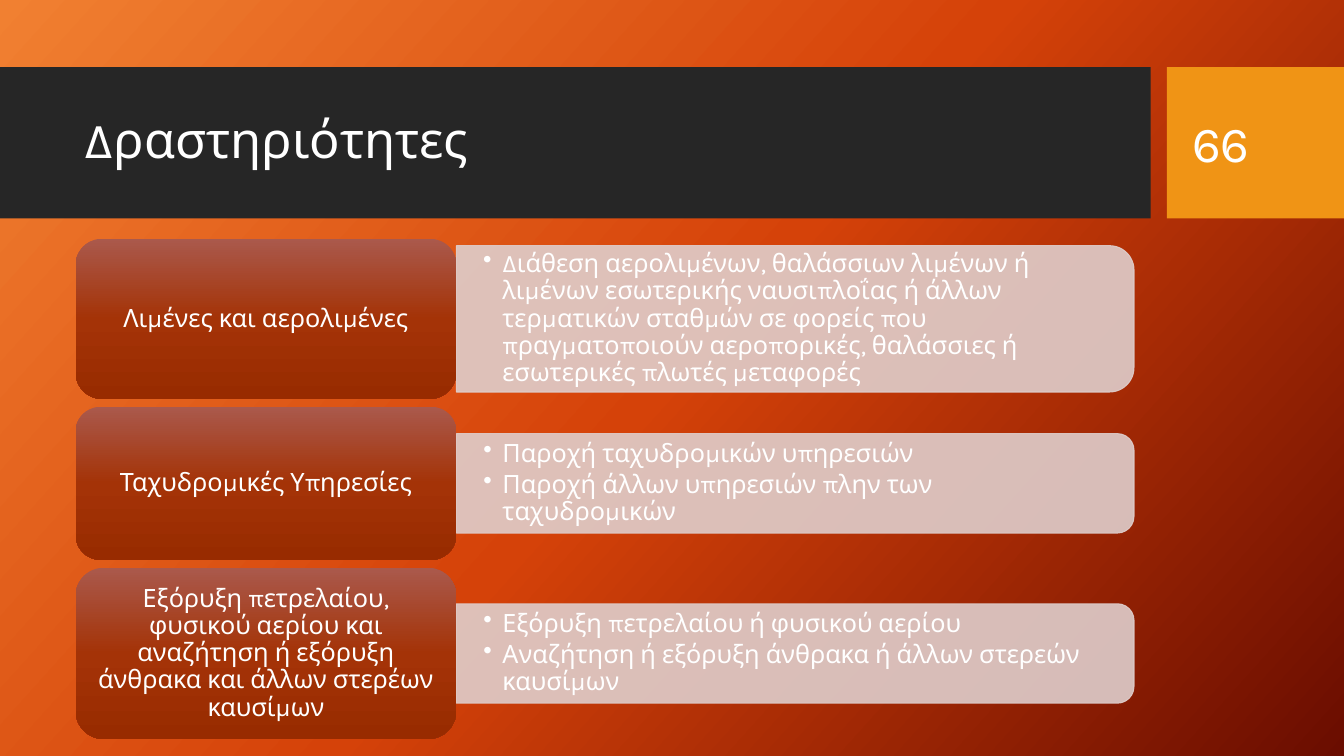
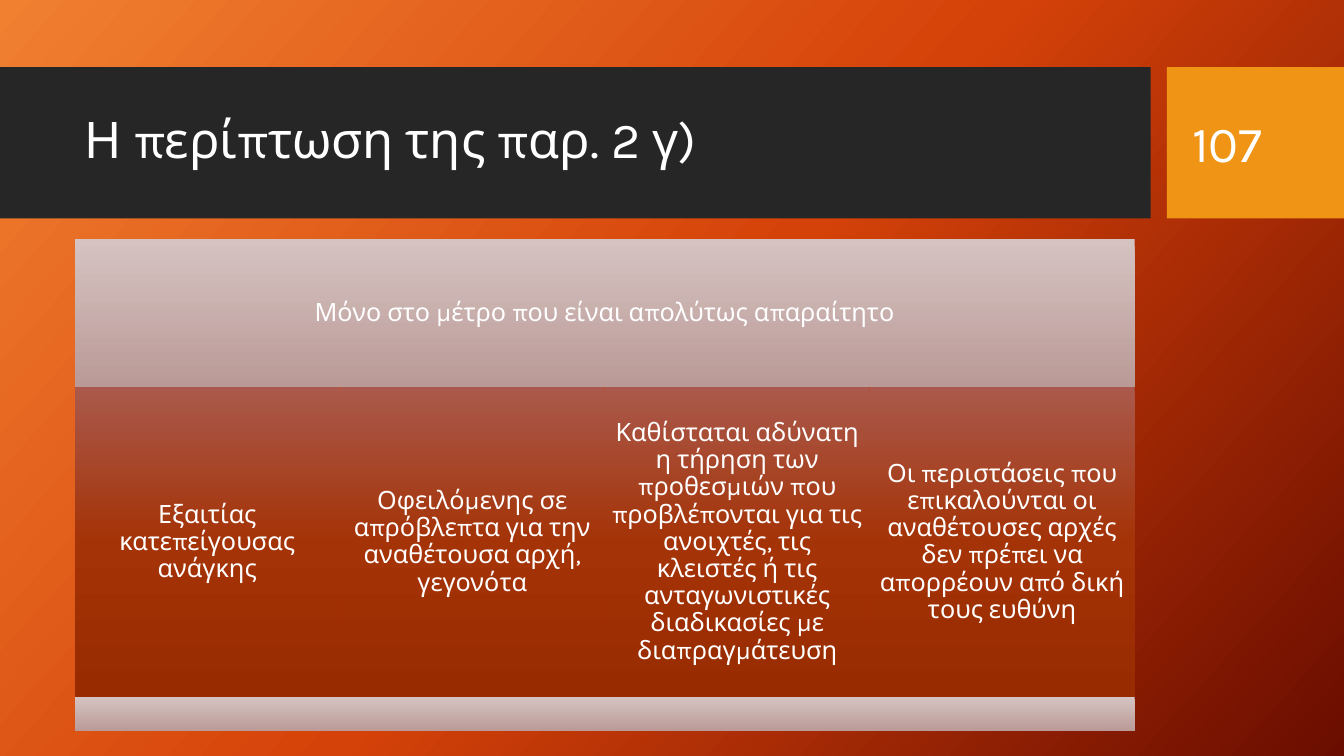
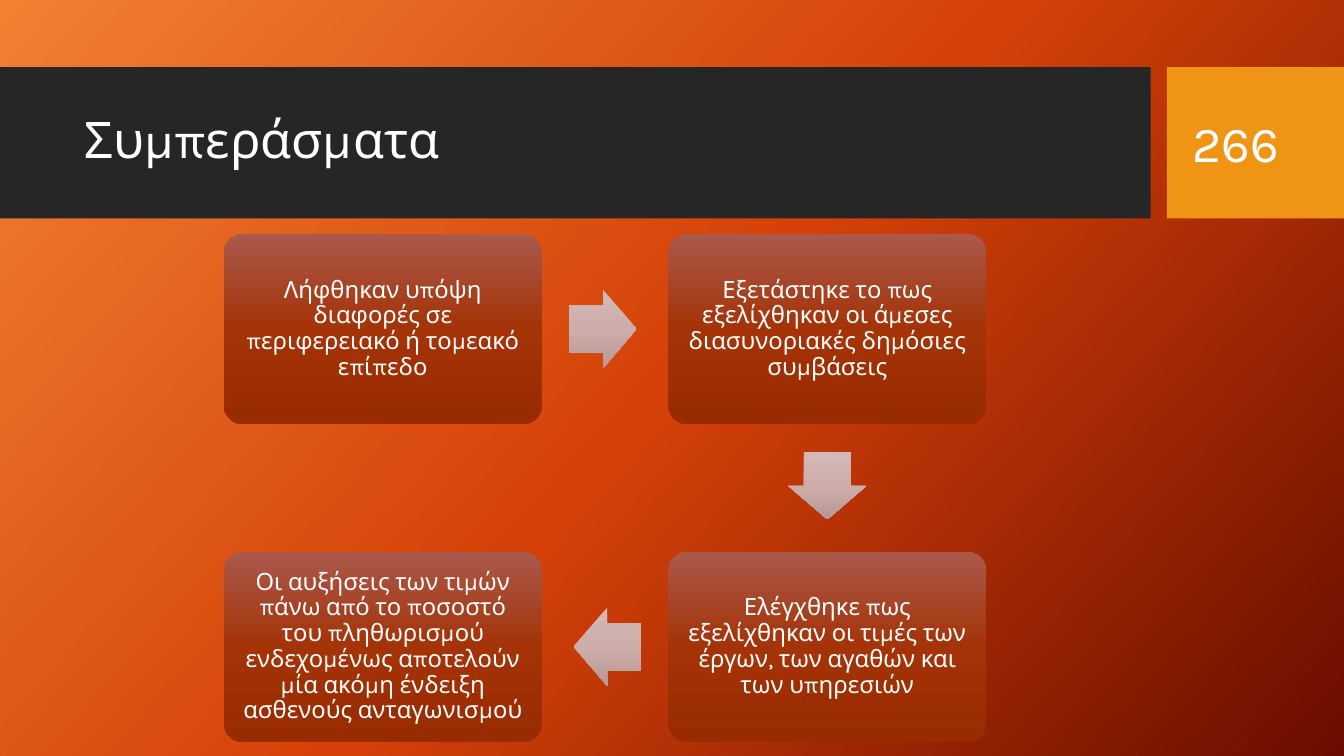
from dataclasses import dataclass
from typing import Any, NamedTuple

from lxml.etree import SubElement
from pptx import Presentation
from pptx.dml.color import RGBColor
from pptx.dml.fill import FillFormat
from pptx.enum.shapes import MSO_SHAPE
from pptx.enum.text import MSO_ANCHOR, PP_ALIGN
from pptx.oxml.ns import qn
from pptx.shapes.autoshape import Shape
from pptx.slide import Slide
from pptx.util import Pt

Stops = tuple[tuple[int, str], ...]


@dataclass(frozen=True)
class Theme:
    font: str = "Karla"
    white: str = "FFFFFF"
    band: str = "262626"
    accent: str = "F09415"
    panel: str = "DFCECC"
    panel_opacity: int = 90
    background: Stops = ((0, "F18031"), (50, "D54209"), (100, "6A0D00"))
    card: Stops = ((0, "AA594C"), (50, "A43307"), (100, "982B00"))
    strip: Stops = ((0, "D5C3C1"), (100, "BA9A97"))
    arrow: Stops = ((0, "D3B9B6"), (50, "CDADAA"), (100, "B89895"))
    title_size: float = 36
    body_size: float = 18
    step_size: float = 17


THEME = Theme()


class Box(NamedTuple):
    left: float
    top: float
    width: float
    height: float

    @property
    def center(self) -> tuple[float, float]:
        return self.left + self.width / 2, self.top + self.height / 2

    @classmethod
    def around(cls, x: float, y: float, width: float, height: float) -> "Box":
        return cls(x - width / 2, y - height / 2, width, height)

    def lengths(self) -> list[Pt]:
        return [Pt(value) for value in self]


@dataclass(frozen=True)
class TextStyle:
    size: float
    align: PP_ALIGN = PP_ALIGN.CENTER
    line_spacing: float = 0.9
    space_after: float = 0
    margins: tuple[float, float] = (5, 5)
    bullet_indent: float = 0


TITLE = TextStyle(THEME.title_size, PP_ALIGN.LEFT, margins=(7.2, 3.6))
NUMBER = TextStyle(THEME.title_size, PP_ALIGN.LEFT, 1, margins=(7.2, 3.6))
CARD = TextStyle(THEME.body_size)
STEP = TextStyle(THEME.step_size)
BULLETS = TextStyle(THEME.body_size, PP_ALIGN.LEFT, space_after=2.7,
                    margins=(19.2, 10), bullet_indent=13.7)


@dataclass(frozen=True)
class Activity:
    name: str
    details: tuple[str, ...]
    card_height: float
    panel_height: float


ACTIVITIES = (
    Activity("Λιμένες και αερολιμένες",
             ("Διάθεση αερολιμένων, θαλάσσιων λιμένων ή λιμένων εσωτερικής ναυσιπλοΐας "
              "ή άλλων τερματικών σταθμών σε φορείς που πραγματοποιούν αεροπορικές, "
              "θαλάσσιες ή εσωτερικές πλωτές μεταφορές",), 114.5, 104.5),
    Activity("Ταχυδρομικές Υπηρεσίες",
             ("Παροχή ταχυδρομικών υπηρεσιών",
              "Παροχή άλλων υπηρεσιών πλην των ταχυδρομικών"), 109.5, 71),
    Activity("Εξόρυξη πετρελαίου, φυσικού αερίου και αναζήτηση ή εξόρυξη άνθρακα "
             "και άλλων στερέων καυσίμων",
             ("Εξόρυξη πετρελαίου ή φυσικού αερίου",
              "Αναζήτηση ή εξόρυξη άνθρακα ή άλλων στερεών καυσίμων"), 122.5, 71),
)

CONDITIONS = (
    "Εξαιτίας κατεπείγουσας ανάγκης",
    "Οφειλόμενης σε απρόβλεπτα για την αναθέτουσα αρχή, γεγονότα",
    "Καθίσταται αδύνατη η τήρηση των προθεσμιών που προβλέπονται για τις ανοιχτές, "
    "τις κλειστές ή τις ανταγωνιστικές διαδικασίες με διαπραγμάτευση",
    "Οι περιστάσεις που επικαλούνται οι αναθέτουσες αρχές δεν πρέπει να απορρέουν "
    "από δική τους ευθύνη",
)


class Step(NamedTuple):
    column: int
    row: int
    text: str


STEPS = (
    Step(0, 0, "Λήφθηκαν υπόψη διαφορές σε περιφερειακό ή τομεακό επίπεδο"),
    Step(1, 0, "Εξετάστηκε το πως εξελίχθηκαν οι άμεσες διασυνοριακές δημόσιες συμβάσεις"),
    Step(1, 1, "Ελέγχθηκε πως εξελίχθηκαν οι τιμές των έργων, των αγαθών και των υπηρεσιών"),
    Step(0, 1, "Οι αυξήσεις των τιμών πάνω από το ποσοστό του πληθωρισμού ενδεχομένως "
               "αποτελούν μία ακόμη ένδειξη ασθενούς ανταγωνισμού"),
)

ARROWS = {
    (1, 0): MSO_SHAPE.RIGHT_ARROW,
    (0, 1): MSO_SHAPE.DOWN_ARROW,
    (-1, 0): MSO_SHAPE.LEFT_ARROW,
}


def apply_format(target: Any, values: dict[str, Any]) -> None:
    for name, value in values.items():
        setattr(target, name, value)


def paint_gradient(fill: FillFormat, owner: Any, stops: Stops, angle: float) -> None:
    """Fill with any number of stops; owner is the XML element holding the fill."""
    fill.gradient()
    fill.gradient_angle = 360 - angle
    stop_list = next(owner.iter(qn("a:gsLst")))
    for old_stop in list(stop_list):
        stop_list.remove(old_stop)
    for position, color in stops:
        stop = SubElement(stop_list, qn("a:gs"), pos=str(position * 1000))
        SubElement(stop, qn("a:srgbClr"), val=color)


def add_bullet(paragraph: Any, indent: float) -> None:
    properties = paragraph._p.get_or_add_pPr()
    properties.set("marL", str(Pt(indent)))
    properties.set("indent", str(-Pt(indent)))
    SubElement(properties, qn("a:buChar"), char="•")


def write_text(shape: Shape, texts: tuple[str, ...], style: TextStyle) -> None:
    frame = shape.text_frame
    side, edge = (Pt(margin) for margin in style.margins)
    apply_format(frame, {
        "word_wrap": True, "vertical_anchor": MSO_ANCHOR.MIDDLE,
        "margin_left": side, "margin_right": side,
        "margin_top": edge, "margin_bottom": edge,
    })
    for index, text in enumerate(texts):
        paragraph = frame.add_paragraph() if index else frame.paragraphs[0]
        if style.bullet_indent:
            add_bullet(paragraph, style.bullet_indent)
        apply_format(paragraph, {
            "alignment": style.align, "line_spacing": style.line_spacing,
            "space_after": Pt(style.space_after),
        })
        run = paragraph.add_run()
        run.text = text
        apply_format(run.font, {"name": THEME.font, "size": Pt(style.size)})
        run.font.color.rgb = RGBColor.from_string(THEME.white)


def add_text(slide: Slide, box: Box, texts: tuple[str, ...], style: TextStyle) -> None:
    write_text(slide.shapes.add_textbox(*box.lengths()), texts, style)


def add_block(slide: Slide, box: Box, paint: str | Stops,
              kind: MSO_SHAPE = MSO_SHAPE.RECTANGLE,
              adjustments: tuple[float, ...] = ()) -> Shape:
    """Add a borderless shape with a plain colour or a downward gradient."""
    shape = slide.shapes.add_shape(kind, *box.lengths())
    shape.shadow.inherit = False
    shape.line.fill.background()
    for index, value in enumerate(adjustments):
        shape.adjustments[index] = value
    if isinstance(paint, str):
        shape.fill.solid()
        shape.fill.fore_color.rgb = RGBColor.from_string(paint)
    else:
        paint_gradient(shape.fill, shape._element.spPr, paint, 90)
    return shape


def add_base_slide(presentation: Any, title: str, number: str) -> Slide:
    slide = presentation.slides.add_slide(presentation.slide_layouts[6])
    paint_gradient(slide.background.fill, slide._element, THEME.background, 42)
    add_block(slide, Box(0, 48, 822, 108), THEME.band)
    add_block(slide, Box(833.5, 48, 126.5, 108), THEME.accent)
    add_text(slide, Box(53.5, 59, 757, 85), (title,), TITLE)
    add_text(slide, Box(844.5, 59, 91, 86), (number,), NUMBER)
    return slide


def add_detail_panel(slide: Slide, box: Box, details: tuple[str, ...]) -> None:
    """Add a bullet panel whose right-hand corners are rounded."""
    turned = Box.around(*box.center, box.height, box.width)
    panel = add_block(slide, turned, THEME.panel, MSO_SHAPE.ROUND_2_SAME_RECTANGLE)
    panel.rotation = 90
    panel.line.color.rgb = RGBColor.from_string(THEME.panel)
    panel.line.width = Pt(0.75)
    for color in panel._element.spPr.iter(qn("a:srgbClr")):
        SubElement(color, qn("a:alpha"), val=str(THEME.panel_opacity * 1000))
    corner = box.height * 0.05
    text_box = Box(box.left, box.top + corner, box.width - corner, box.height - 2 * corner)
    add_text(slide, text_box, details, BULLETS)


def build_activities(presentation: Any) -> None:
    slide = add_base_slide(presentation, "Δραστηριότητες", "66")
    left, top, card_width, panel_width, gap = 54, 170.5, 272, 484, 5.5
    for activity in ACTIVITIES:
        card_box = Box(left, top, card_width, activity.card_height)
        panel_top = card_box.center[1] - activity.panel_height / 2
        panel_box = Box(left + card_width, panel_top, panel_width, activity.panel_height)
        add_detail_panel(slide, panel_box, activity.details)
        card = add_block(slide, card_box, THEME.card, MSO_SHAPE.ROUNDED_RECTANGLE)
        write_text(card, (activity.name,), CARD)
        top += activity.card_height + gap


def build_conditions(presentation: Any) -> None:
    slide = add_base_slide(presentation, "Η περίπτωση της παρ. 2 γ)", "107")
    left, top, width = 53.5, 170.5, 757
    header_height, body_height, footer_height = 106, 221.5, 24.5
    header = add_block(slide, Box(left, top, width, header_height), THEME.strip)
    write_text(header, ("Μόνο στο μέτρο που είναι απολύτως απαραίτητο",), CARD)
    body_top = top + header_height
    column_width = width / len(CONDITIONS)
    for index, condition in enumerate(CONDITIONS):
        box = Box(left + index * column_width, body_top, column_width, body_height)
        write_text(add_block(slide, box, THEME.card), (condition,), CARD)
    add_block(slide, Box(left, body_top + body_height, width, footer_height), THEME.strip)


def build_conclusions(presentation: Any) -> None:
    slide = add_base_slide(presentation, "Συμπεράσματα", "266")
    left, top, width, height = 160, 167, 227, 136
    column_pitch, row_pitch = 317.5, 227
    arrow_length, arrow_breadth, arrow_shift = 48, 56, 1.5
    boxes = [Box(left + step.column * column_pitch, top + step.row * row_pitch, width, height)
             for step in STEPS]
    for step, box in zip(STEPS, boxes):
        card = add_block(slide, box, THEME.card, MSO_SHAPE.ROUNDED_RECTANGLE, (0.1,))
        write_text(card, (step.text,), STEP)
    for index, (step, following) in enumerate(zip(STEPS, STEPS[1:])):
        across, down = following.column - step.column, following.row - step.row
        start, end = boxes[index].center, boxes[index + 1].center
        x = (start[0] + end[0]) / 2 - across * arrow_shift
        y = (start[1] + end[1]) / 2 - down * arrow_shift
        size = (arrow_length, arrow_breadth) if across else (arrow_breadth, arrow_length)
        add_block(slide, Box.around(x, y, *size), THEME.arrow, ARROWS[across, down], (0.6, 0.5))


def main() -> None:
    presentation = Presentation()
    apply_format(presentation, {"slide_width": Pt(960), "slide_height": Pt(540)})
    build_activities(presentation)
    build_conditions(presentation)
    build_conclusions(presentation)
    presentation.save("out.pptx")


if __name__ == "__main__":
    main()
